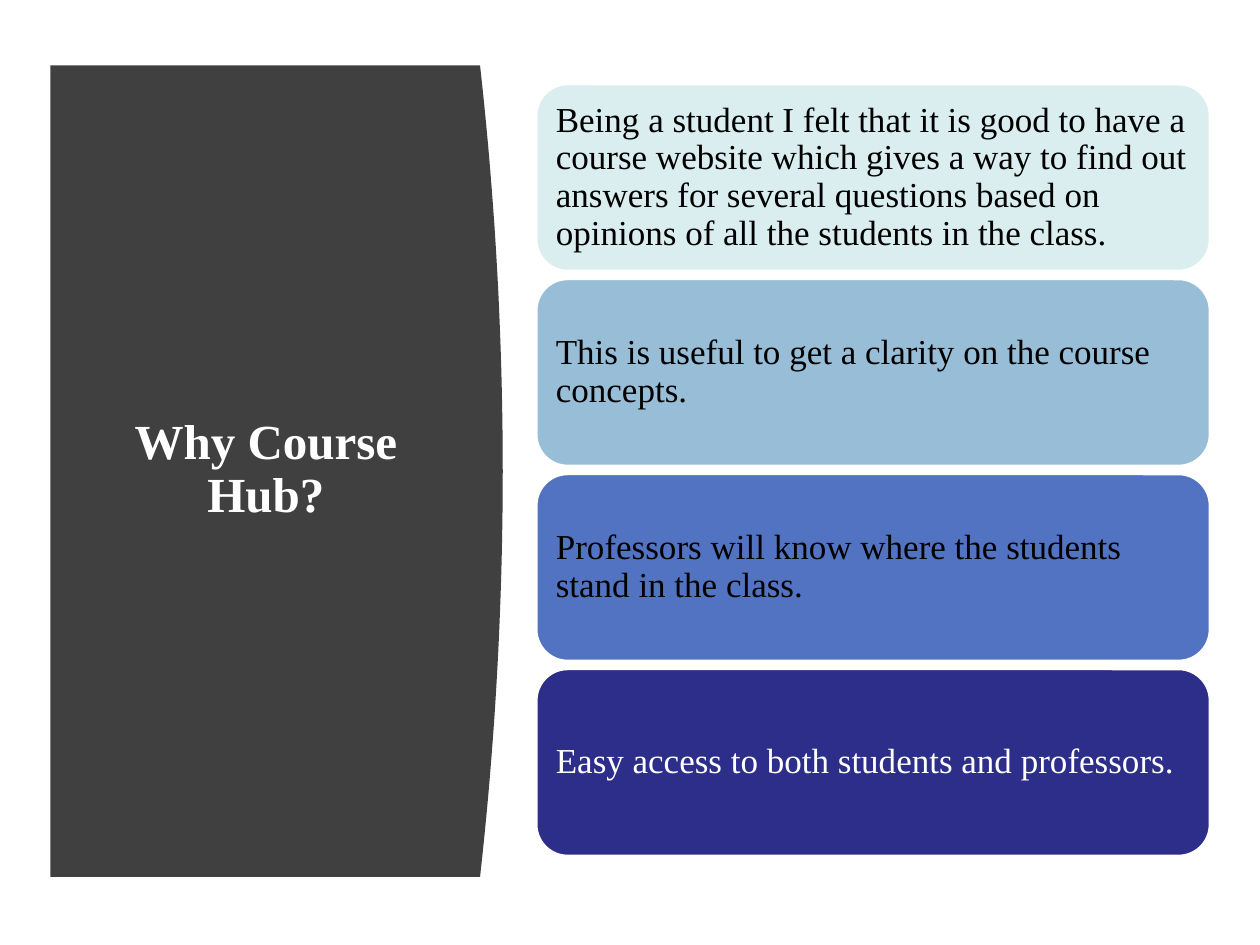
from pptx import Presentation
from pptx.dml.color import RGBColor
from pptx.enum.shapes import MSO_SHAPE as Shape
from pptx.enum.text import MSO_ANCHOR as Anchor, MSO_AUTO_SIZE as AutoSize, PP_ALIGN as Align
from pptx.util import Inches, Pt

FONT = "Times New Roman"
TITLE_ONLY = 5
REASONS = [
    ("Being a student I felt that it is good to have a course website which gives "
     "a way to find out answers for several questions based on opinions of all "
     "the students in the class.", "DAEDEF", "000000"),
    ("This is useful to get a clarity on the course concepts.", "98BDD6", "000000"),
    ("Professors will know where the students stand in the class.", "5273C1", "000000"),
    ("Easy access to both students and professors.", "2D2D8A", "FFFFFF"),
]


def color(value):
    return RGBColor.from_string(value)


def write(frame, text, size, ink, align, inset_x, inset_y, bold=False):
    frame.word_wrap = True
    frame.auto_size = AutoSize.NONE
    frame.vertical_anchor = Anchor.MIDDLE
    frame.margin_left = frame.margin_right = Inches(inset_x)
    frame.margin_top = frame.margin_bottom = Inches(inset_y)
    para = frame.paragraphs[0]
    para.alignment = align
    para.line_spacing = 0.9
    span = para.add_run()
    span.text = text
    span.font.name = FONT
    span.font.size = Pt(size)
    span.font.bold = bold
    span.font.color.rgb = color(ink)


def add_title_panel(page, left, top, width, height):
    # Dark panel whose right side bulges as a parabola
    bulge, steps = 0.18, 40
    edge = left + width - bulge
    curve = []
    for step in range(steps + 1):
        t = step / steps
        curve.append((Inches(edge + 4 * bulge * t * (1 - t)), Inches(top + height * t)))
    builder = page.shapes.build_freeform(Inches(left), Inches(top))
    builder.add_line_segments(curve + [(Inches(left), Inches(top + height))], close=True)
    panel = builder.convert_to_shape()
    panel.shadow.inherit = False
    panel.fill.solid()
    panel.fill.fore_color.rgb = color("404040")
    panel.line.fill.background()

    # Title, brought in front of the panel
    title = page.shapes.title
    title.left, title.top = Inches(left + 0.31), Inches(top + 0.59)
    title.width, title.height = Inches(2.8), Inches(height - 1.2)
    write(title.text_frame, "Why Course Hub?", 28, "FFFFFF", Align.CENTER,
          0.1, 0.05, bold=True)
    panel._element.addnext(title._element)


def add_reason_cards(page, left, top, width, height):
    gap = 0.07
    card_height = (height - gap * (len(REASONS) - 1)) / len(REASONS)
    for row, (text, fill, ink) in enumerate(REASONS):
        card = page.shapes.add_shape(
            Shape.ROUNDED_RECTANGLE, Inches(left), Inches(top + row * (card_height + gap)),
            Inches(width), Inches(card_height))
        card.shadow.inherit = False
        card.fill.solid()
        card.fill.fore_color.rgb = color(fill)
        card.line.color.rgb = color("FFFFFF")
        card.line.width = Pt(1)
        # The rounded corners add 0.07 inch to the left and right insets
        write(card.text_frame, text, 20, ink, Align.LEFT, 0.08, 0.08)


def main():
    deck = Presentation()
    deck.slide_width, deck.slide_height = Inches(10), Inches(7.5)
    page = deck.slides.add_slide(deck.slide_layouts[TITLE_ONLY])
    page.background.fill.solid()
    page.background.fill.fore_color.rgb = color("FFFFFF")
    add_title_panel(page, 0.4, 0.52, 3.59, 6.44)
    add_reason_cards(page, 4.26, 0.67, 5.34, 6.12)
    deck.save("out.pptx")


if __name__ == "__main__":
    main()
